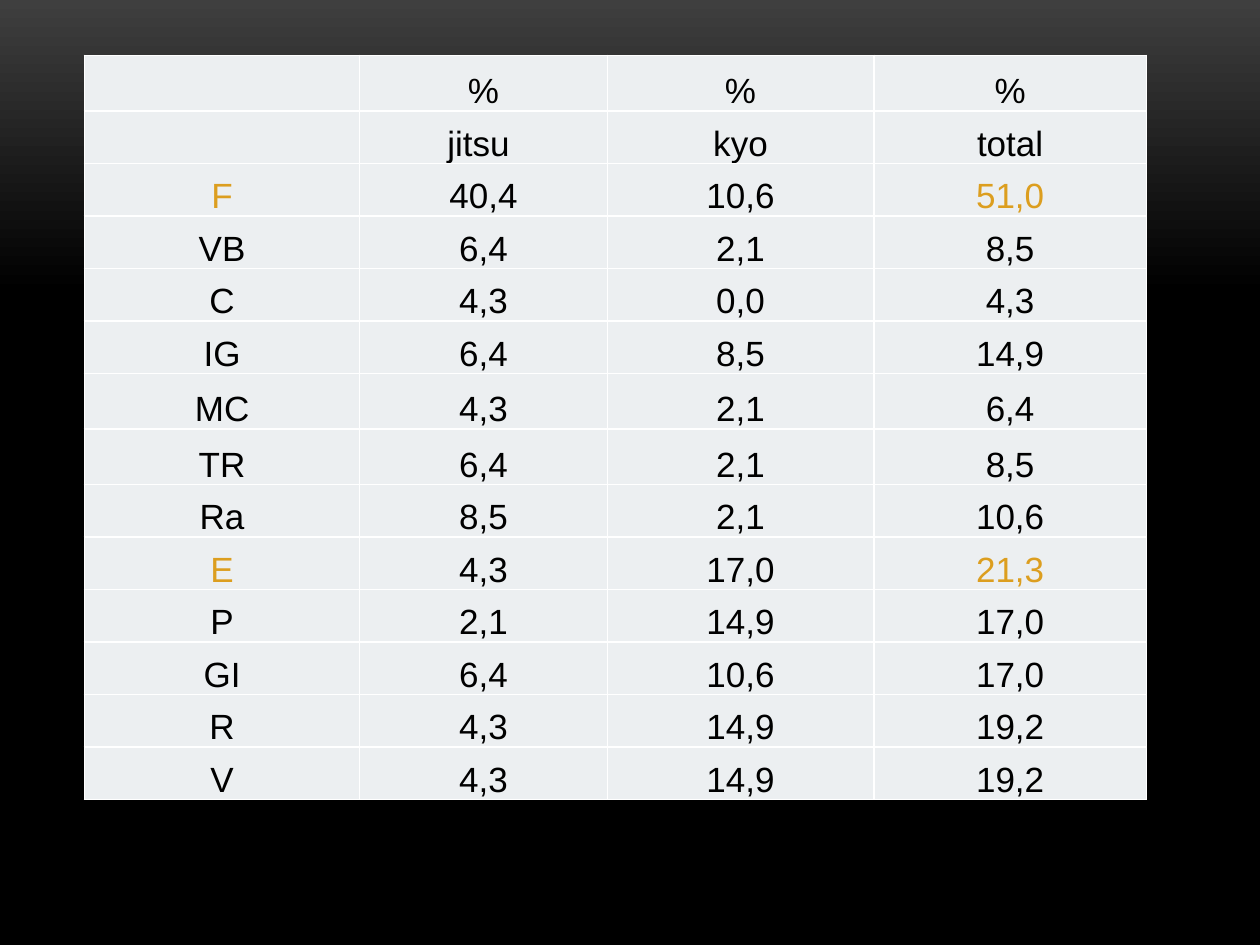
from dataclasses import dataclass

from lxml.etree import SubElement
from pptx import Presentation
from pptx.dml.color import RGBColor as Rgb
from pptx.enum.text import MSO_ANCHOR as Anchor, PP_ALIGN as Align
from pptx.oxml.ns import qn
from pptx.util import Inches, Pt


@dataclass(frozen=True)
class Theme:
    font: str = "Arial"
    size: int = 20
    text: str = "000000"
    accent: str = "DC9E1F"
    cell: str = "ECEFF1"
    border: str = "FFFFFF"
    border_width: int = 1
    page_top: str = "3F3F3F"
    page_base: str = "000000"


THEME = Theme()
PAGE_WIDTH, PAGE_HEIGHT = 10, 7.5
TABLE_BOX = (0.67, 0.44, 8.43, 5.91)
COLUMN_SHARES = (2.18, 1.96, 2.11, 2.16)
TALL_ROWS, TALL_HEIGHT = (0, 6, 7), 0.44
ACCENT_ROWS, ACCENT_COLUMNS = ("F", "E"), (0, 3)

ROWS = [
    ("", "%", "%", "%"),
    ("", "jitsu ", "kyo", "total"),
    ("F", "40,4", "10,6", "51,0"),
    ("VB", "6,4", "2,1", "8,5"),
    ("C", "4,3", "0,0", "4,3"),
    ("IG", "6,4", "8,5", "14,9"),
    ("MC", "4,3", "2,1", "6,4"),
    ("TR", "6,4", "2,1", "8,5"),
    ("Ra", "8,5", "2,1", "10,6"),
    ("E", "4,3", "17,0", "21,3"),
    ("P", "2,1", "14,9", "17,0"),
    ("GI", "6,4", "10,6", "17,0"),
    ("R", "4,3", "14,9", "19,2"),
    ("V", "4,3", "14,9", "19,2"),
]


def write_text(frame, text, color=THEME.text, size=THEME.size, align=Align.CENTER):
    para = frame.paragraphs[0]
    para.alignment = align
    if text:
        span = para.add_run()
        span.text = text
        span.font.name = THEME.font
        span.font.size = Pt(size)
        span.font.color.rgb = Rgb.from_string(color)


def style_cell(cell):
    cell.margin_left = cell.margin_right = cell.margin_top = cell.margin_bottom = 0
    cell.vertical_anchor = Anchor.BOTTOM
    # Borders come before the fill in the cell properties
    properties = cell._tc.get_or_add_tcPr()
    for side in ("a:lnL", "a:lnR", "a:lnT", "a:lnB"):
        line = SubElement(properties, qn(side), w=str(Pt(THEME.border_width)))
        solid = SubElement(line, qn("a:solidFill"))
        SubElement(solid, qn("a:srgbClr"), val=THEME.border)
    cell.fill.solid()
    cell.fill.fore_color.rgb = Rgb.from_string(THEME.cell)


def paint_background(page):
    fill = page.background.fill
    fill.gradient()
    fill.gradient_angle = 270
    stops = ((0, THEME.page_top), (0.31, THEME.page_base))
    for stop, (position, color) in zip(fill.gradient_stops, stops):
        stop.position = position
        stop.color.rgb = Rgb.from_string(color)


def add_percent_table(page, box):
    left, top, width, height = box
    table = page.shapes.add_table(
        len(ROWS), len(COLUMN_SHARES), *(Inches(length) for length in box)
    ).table
    table.first_row = table.horz_banding = False

    # Columns share the width; the normal rows share what the tall ones leave
    for column, share in zip(table.columns, COLUMN_SHARES):
        column.width = Inches(width * share / sum(COLUMN_SHARES))
    normal_height = (height - TALL_HEIGHT * len(TALL_ROWS)) / (len(ROWS) - len(TALL_ROWS))
    for index, row in enumerate(table.rows):
        row.height = Inches(TALL_HEIGHT if index in TALL_ROWS else normal_height)

    # Cells, with the leading rows picked out
    for row_index, values in enumerate(ROWS):
        for column_index, value in enumerate(values):
            cell = table.cell(row_index, column_index)
            style_cell(cell)
            marked = values[0] in ACCENT_ROWS and column_index in ACCENT_COLUMNS
            write_text(cell.text_frame, value, color=THEME.accent if marked else THEME.text)


def main():
    deck = Presentation()
    deck.slide_width, deck.slide_height = Inches(PAGE_WIDTH), Inches(PAGE_HEIGHT)
    page = deck.slides.add_slide(deck.slide_layouts[6])
    paint_background(page)
    add_percent_table(page, TABLE_BOX)
    deck.save("out.pptx")


if __name__ == "__main__":
    main()
